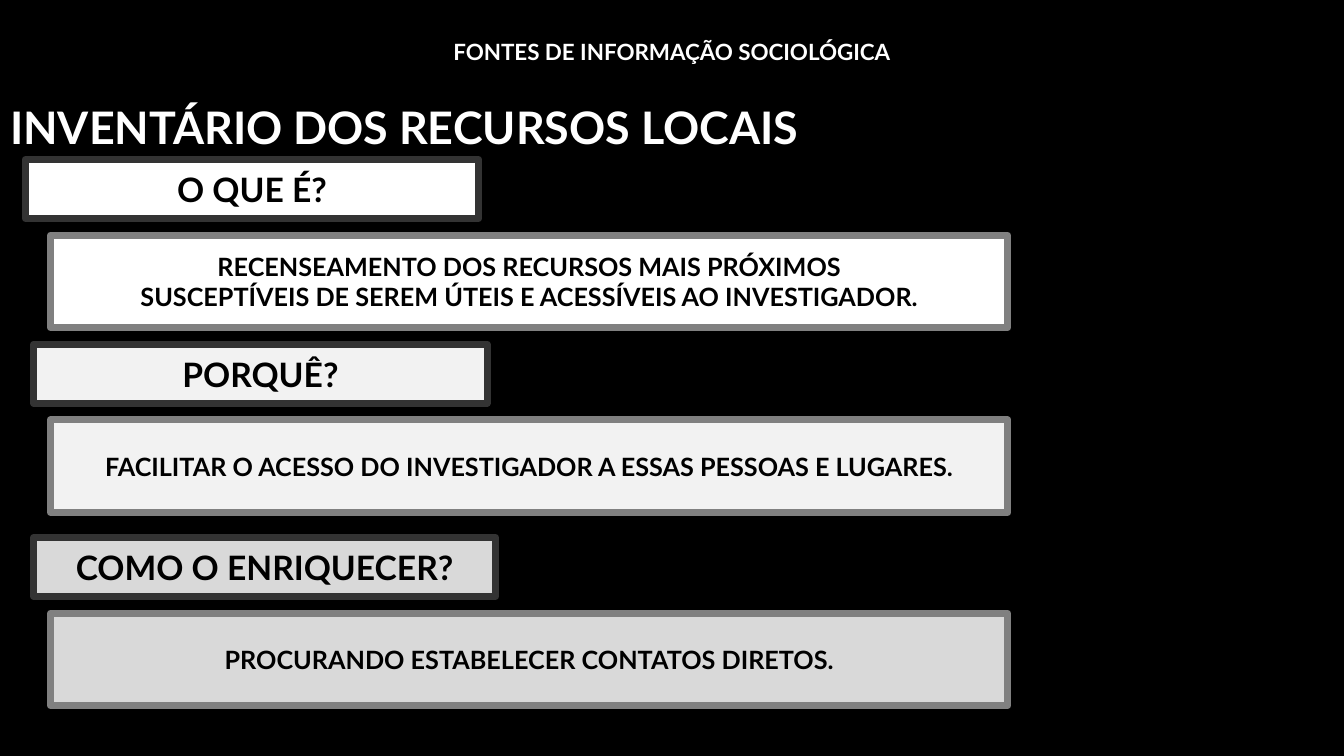
import dataclasses

import pptx
import pptx.dml.color
import pptx.enum.shapes
import pptx.enum.text
import pptx.util

ALIGN = pptx.enum.text.PP_ALIGN
ANCHOR = pptx.enum.text.MSO_ANCHOR
AUTO_SIZE = pptx.enum.text.MSO_AUTO_SIZE


@dataclasses.dataclass(frozen=True)
class Theme:
    font: str = "Lato"
    background: str = "000000"
    light_text: str = "FFFFFF"
    dark_text: str = "000000"
    question_border: str = "333333"
    answer_border: str = "808080"
    fills: tuple = ("FFFFFF", "F2F2F2", "D9D9D9")
    border_width: int = 5
    header_size: int = 16
    title_size: int = 32
    question_size: int = 24
    answer_size: int = 18


class SlideBuilder:
    """Places elements on a grid of 160 columns by 90 rows."""

    COLUMNS, ROWS = 160, 90

    def __init__(self, presentation, theme):
        self.theme = theme
        self.column = presentation.slide_width / self.COLUMNS
        self.row = presentation.slide_height / self.ROWS
        self.slide = presentation.slides.add_slide(presentation.slide_layouts[5])
        self.paint(self.slide.background.fill, theme.background)

    def box(self, left, top, width, height):
        return (round(left * self.column), round(top * self.row),
                round(width * self.column), round(height * self.row))

    def paint(self, fill, color):
        fill.solid()
        fill.fore_color.rgb = pptx.dml.color.RGBColor.from_string(color)

    def set_text(self, shape, lines, size, color, align, anchor, wrap=True):
        frame = shape.text_frame
        frame.word_wrap = wrap
        frame.auto_size = AUTO_SIZE.NONE
        frame.vertical_anchor = anchor
        for index, line in enumerate(lines):
            paragraph = frame.add_paragraph() if index else frame.paragraphs[0]
            paragraph.alignment = align
            run = paragraph.add_run()
            run.text = line
            run.font.name = self.theme.font
            run.font.size = pptx.util.Pt(size)
            run.font.bold = True
            run.font.color.rgb = pptx.dml.color.RGBColor.from_string(color)

    def header(self, text, *cells):
        shape = self.slide.shapes.add_textbox(*self.box(*cells))
        self.set_text(shape, [text], self.theme.header_size, self.theme.light_text,
                      ALIGN.CENTER, ANCHOR.TOP)
        shape.text_frame.auto_size = AUTO_SIZE.SHAPE_TO_FIT_TEXT

    def title(self, text, *cells):
        shape = self.slide.shapes.title
        shape.left, shape.top, shape.width, shape.height = self.box(*cells)
        self.set_text(shape, [text], self.theme.title_size, self.theme.light_text,
                      ALIGN.LEFT, ANCHOR.BOTTOM)
        shape.text_frame.paragraphs[0].line_spacing = 0.9

    def panel(self, lines, size, fill, border, *cells):
        shape = self.slide.shapes.add_shape(
            pptx.enum.shapes.MSO_SHAPE.RECTANGLE, *self.box(*cells))
        shape.shadow.inherit = False
        self.paint(shape.fill, fill)
        self.paint(shape.line.fill, border)
        shape.line.width = pptx.util.Pt(self.theme.border_width)
        self.set_text(shape, lines, size, self.theme.dark_text,
                      ALIGN.CENTER, ANCHOR.MIDDLE, wrap=False)

    def question(self, text, fill, *cells):
        self.panel([text], self.theme.question_size, fill,
                   self.theme.question_border, *cells)

    def answer(self, lines, fill, *cells):
        self.panel(lines, self.theme.answer_size, fill,
                   self.theme.answer_border, *cells)


# Question, its left column, top row and width, then the answer lines
SECTIONS = (
    ("O QUE É?", 3, 19, 54,
     ["RECENSEAMENTO DOS RECURSOS MAIS PRÓXIMOS",
      "SUSCEPTÍVEIS DE SEREM ÚTEIS E ACESSÍVEIS AO INVESTIGADOR."]),
    ("PORQUÊ?", 4, 41, 54,
     ["FACILITAR O ACESSO DO INVESTIGADOR A ESSAS PESSOAS E LUGARES."]),
    ("COMO O ENRIQUECER?", 4, 64, 55,
     ["PROCURANDO ESTABELECER CONTATOS DIRETOS."]),
)
ANSWER_OFFSET = 9


def main():
    presentation = pptx.Presentation()
    presentation.slide_width = pptx.util.Inches(13.33)
    presentation.slide_height = pptx.util.Inches(7.5)
    theme = Theme()
    builder = SlideBuilder(presentation, theme)

    # Header and title
    builder.header("FONTES DE INFORMAÇÃO SOCIOLÓGICA", 0, 4, 160, 4.4)
    builder.title("INVENTÁRIO DOS RECURSOS LOCAIS", 0, 8, 120, 11)

    # Each question with its answer below
    for (question, left, top, width, lines), fill in zip(SECTIONS, theme.fills):
        builder.question(question, fill, left, top, width, 7)
        builder.answer(lines, fill, 6, top + ANSWER_OFFSET, 114, 11)

    presentation.save("out.pptx")


if __name__ == "__main__":
    main()
